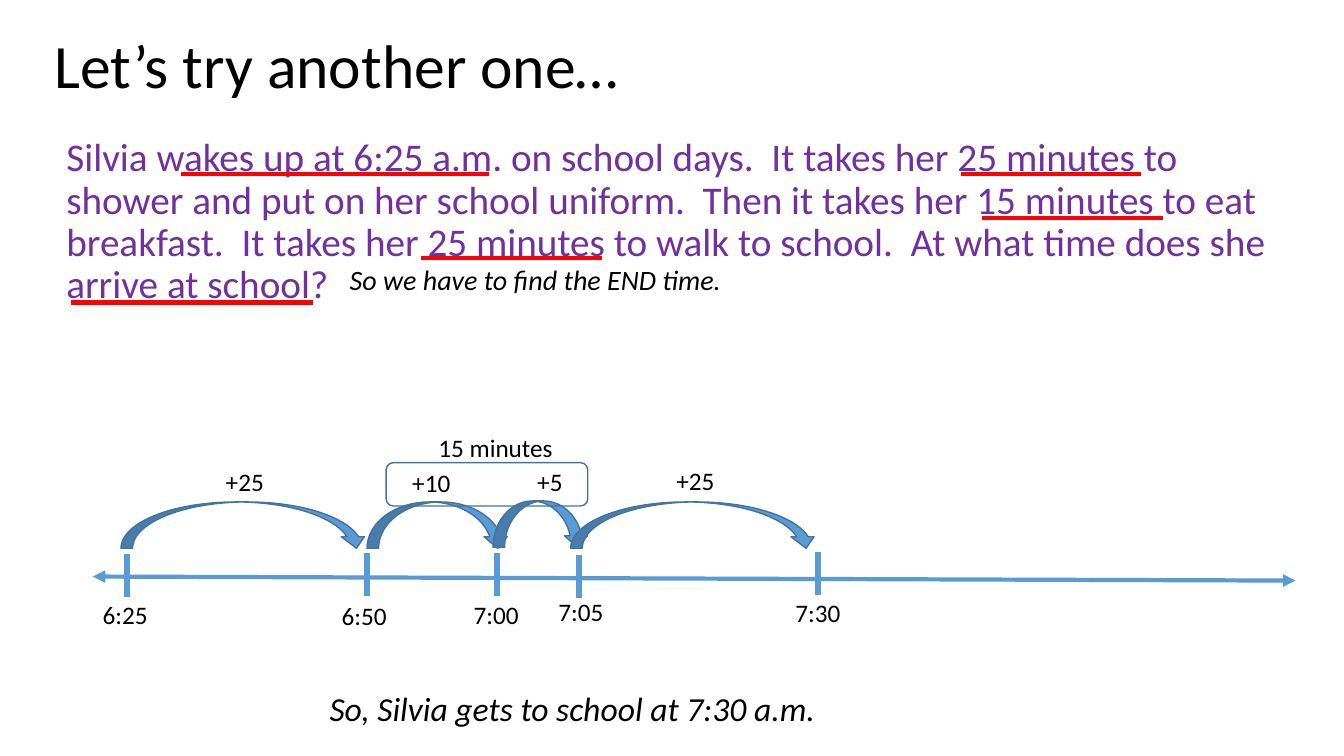
from lxml.etree import SubElement
from pptx import Presentation
from pptx.dml.color import RGBColor
from pptx.enum.shapes import MSO_CONNECTOR, MSO_SHAPE
from pptx.enum.text import MSO_ANCHOR, PP_ALIGN
from pptx.oxml.ns import qn
from pptx.util import Inches, Pt

FONT = "Calibri"
BLACK, PURPLE, RED = "000000", "7030A0", "FF0000"
BLUE, DARK_BLUE = "5B9BD5", "43739E"


def color(hex_string):
    return RGBColor.from_string(hex_string)


def write(shape, text, size=18, ink=BLACK, italic=False, spacing=1.0, before=0,
          anchor=MSO_ANCHOR.TOP):
    frame = shape.text_frame
    frame.word_wrap = True
    frame.vertical_anchor = anchor
    paragraph = frame.paragraphs[0]
    paragraph.alignment = PP_ALIGN.LEFT
    paragraph.line_spacing = spacing
    paragraph.space_before = Pt(before)
    run = paragraph.add_run()
    run.text = text
    run.font.name = FONT
    run.font.size = Pt(size)
    run.font.italic = italic
    run.font.color.rgb = color(ink)


class TimelineSlide:
    def __init__(self, presentation):
        self.slide = presentation.slides.add_slide(presentation.slide_layouts[5])

    def title(self, text, left, top, width, height):
        shape = self.slide.shapes.title
        shape.left, shape.top = Inches(left), Inches(top)
        shape.width, shape.height = Inches(width), Inches(height)
        write(shape, text, size=44, spacing=0.9, anchor=MSO_ANCHOR.MIDDLE)

    def text(self, text, left, top, width, height, **style):
        shape = self.slide.shapes.add_textbox(
            Inches(left), Inches(top), Inches(width), Inches(height))
        write(shape, text, **style)

    def line(self, start, end, ink, weight, arrows=False):
        connector = self.slide.shapes.add_connector(
            MSO_CONNECTOR.STRAIGHT, *map(Inches, start + end))
        connector.line.color.rgb = color(ink)
        connector.line.width = Pt(weight)
        if arrows:
            outline = connector.line._get_or_add_ln()
            for tag in ("a:headEnd", "a:tailEnd"):
                SubElement(outline, qn(tag), type="triangle")
        SubElement(connector._element.spPr, qn("a:effectLst"))

    def underline(self, left, right, top):
        self.line((left, top), (right, top), RED, 3)

    def tick(self, left, top):
        self.line((left, top), (left, top + 0.42), BLUE, 4.5)

    def label(self, text, left, top, width=0.89):
        self.text(text, left, top, width, 0.41)

    def shape(self, kind, left, top, width, height, fill=None):
        shape = self.slide.shapes.add_shape(
            kind, Inches(left), Inches(top), Inches(width), Inches(height))
        shape.shadow.inherit = False
        if fill:
            shape.fill.solid()
            shape.fill.fore_color.rgb = color(fill)
        else:
            shape.fill.background()
        shape.line.color.rgb = color(DARK_BLUE)
        shape.line.width = Pt(1)

    def jump(self, left, top, width):
        self.shape(MSO_SHAPE.CURVED_DOWN_ARROW, left, top, width, 0.46, BLUE)


def main():
    presentation = Presentation()
    presentation.slide_width = Inches(13.33)
    presentation.slide_height = Inches(7.5)
    page = TimelineSlide(presentation)

    page.title("Let’s try another one…", 0.44, 0.19, 11.5, 0.98)
    page.text(
        "Silvia wakes up at 6:25 a.m. on school days.  It takes her 25 minutes to "
        "shower and put on her school uniform.  Then it takes her 15 minutes to eat "
        "breakfast.  It takes her 25 minutes to walk to school.  At what time does "
        "she arrive at school?",
        0.56, 1.32, 12.37, 4.76, size=28, ink=PURPLE, spacing=0.9, before=10)
    page.text("So we have to find the END time.", 3.37, 2.56, 4.29, 0.44,
              size=20, italic=True)

    for left, right, top in [(1.8, 4.85, 1.73), (9.53, 11.32, 1.73),
                             (9.74, 11.53, 2.16), (4.18, 5.97, 2.56),
                             (0.7, 3.1, 3)]:
        page.underline(left, right, top)

    page.line((0.92, 5.72), (12.85, 5.76), BLUE, 3, arrows=True)
    for time, tick_left, tick_top, label_left, label_top in [
            ("6:25", 1.26, 5.5, 0.92, 5.9), ("6:50", 3.64, 5.49, 3.29, 5.91),
            ("7:00", 4.93, 5.49, 4.6, 5.9), ("7:05", 5.74, 5.51, 5.44, 5.87),
            ("7:30", 8.11, 5.48, 7.79, 5.88)]:
        page.tick(tick_left, tick_top)
        page.label(time, label_left, label_top)

    for minutes, left, top, width, label_left, label_top in [
            ("+25", 1.2, 4.98, 2.45, 2.14, 4.58),
            ("+10", 3.64, 4.98, 1.41, 3.99, 4.59),
            ("+5", 4.89, 4.97, 0.95, 5.23, 4.58),
            ("+25", 5.66, 4.98, 2.45, 6.61, 4.57)]:
        page.jump(left, top, width)
        page.label(minutes, label_left, label_top)

    page.shape(MSO_SHAPE.ROUNDED_RECTANGLE, 3.83, 4.59, 2, 0.43)
    page.label("15 minutes", 4.25, 4.24, 1.42)
    page.text("So, Silvia gets to school at 7:30 a.m.", 3.17, 6.78, 8.53, 0.5,
              size=24, italic=True)
    presentation.save("out.pptx")


if __name__ == "__main__":
    main()
